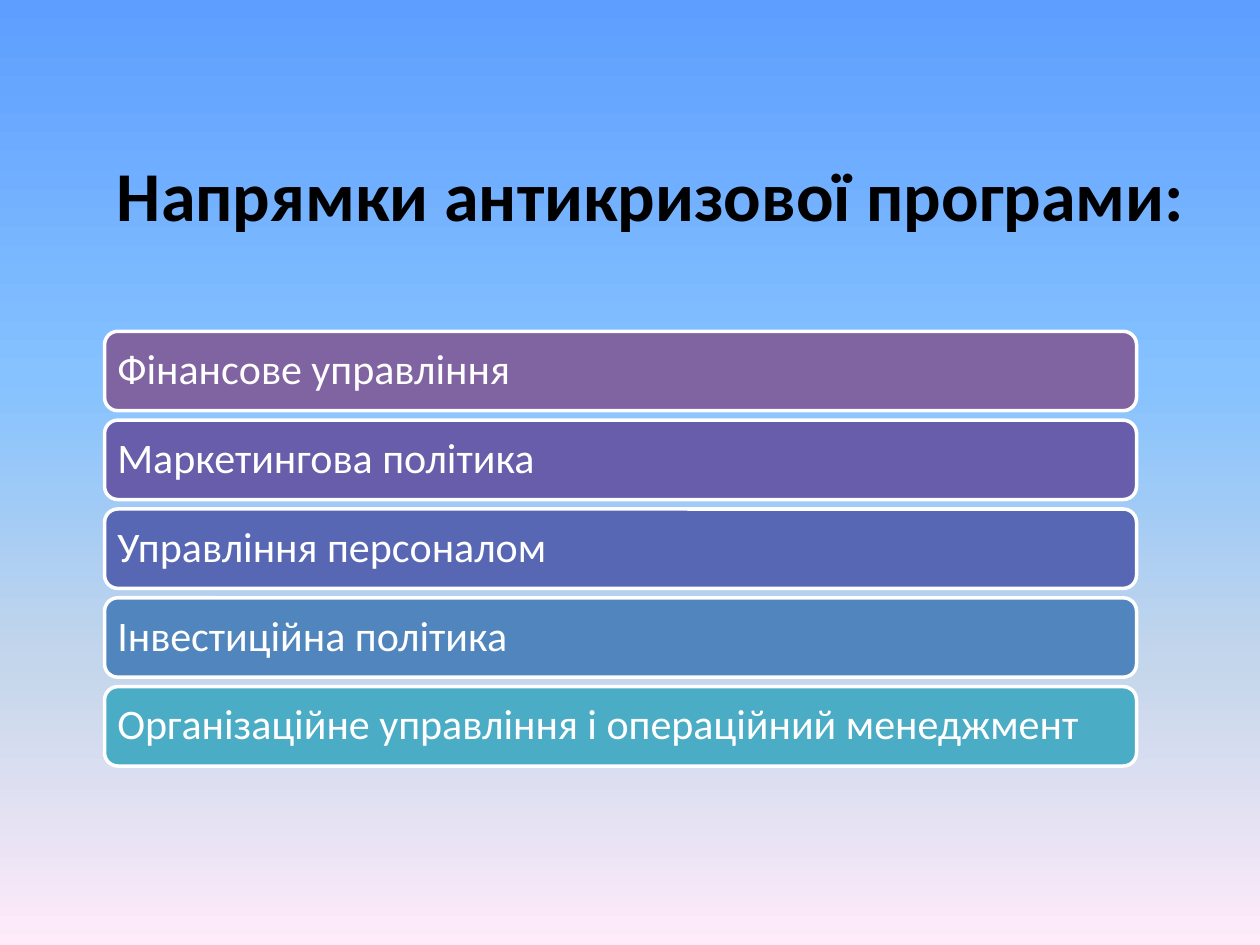
import pptx
import pptx.util
import pptx.dml.color
import pptx.enum.shapes
import pptx.enum.text
import pptx.oxml
import pptx.oxml.ns

Inches, Pt = pptx.util.Inches, pptx.util.Pt
ANCHOR = pptx.enum.text.MSO_ANCHOR
qn = pptx.oxml.ns.qn

# Content
TITLE = "Напрямки антикризової програми:"
BARS = [
    ("Фінансове управління", "8064A2"),
    ("Маркетингова політика", "685DAB"),
    ("Управління персоналом", "5767B4"),
    ("Інвестиційна політика", "5185BD"),
    ("Організаційне управління і операційний менеджмент", "4BACC6"),
]
SKY = [(0, "5E9EFF"), (40, "85C2FF"), (70, "C4D6EB"), (100, "FFEBFA")]

# Layout, in inches
LEFT, TOP, WIDTH, HEIGHT = 0.83, 2.63, 8.19, 0.63
STEP = 0.705
PAD = 0.07  # the rounded corner adds the rest of the inset


def color(code):
    return pptx.dml.color.RGBColor.from_string(code)


def write(shape, text, size=24, ink="FFFFFF", bold=False, wrap=True,
          anchor=ANCHOR.MIDDLE, pad=None, lines=None):
    frame = shape.text_frame
    frame.word_wrap = wrap
    frame.vertical_anchor = anchor
    if pad is not None:
        frame.margin_left = frame.margin_right = Inches(pad)
        frame.margin_top = frame.margin_bottom = Inches(pad)
    para = frame.paragraphs[0]
    para.alignment = pptx.enum.text.PP_ALIGN.LEFT
    if lines:
        para.line_spacing = lines
    run = para.add_run()
    run.text = text
    run.font.name = "Calibri"
    run.font.size = Pt(size)
    run.font.bold = bold
    run.font.color.rgb = color(ink)


def paint(slide, stops):
    fill = slide.background.fill
    fill.gradient()
    fill.gradient_angle = 270
    # A gradient with four stops needs its list rewritten
    group = next(slide.element.iter(qn("a:gsLst")))
    for old in list(group):
        group.remove(old)
    space = pptx.oxml.ns.nsdecls("a")
    for place, code in stops:
        group.append(pptx.oxml.parse_xml(
            f'<a:gs {space} pos="{place * 1000}"><a:srgbClr val="{code}"/></a:gs>'))


def main():
    deck = pptx.Presentation()
    deck.slide_width, deck.slide_height = Inches(10), Inches(7.5)
    slide = deck.slides.add_slide(deck.slide_layouts[6])
    paint(slide, SKY)

    # Stacked bars
    for i, (text, code) in enumerate(BARS):
        bar = slide.shapes.add_shape(
            pptx.enum.shapes.MSO_SHAPE.ROUNDED_RECTANGLE,
            Inches(LEFT), Inches(TOP + i * STEP), Inches(WIDTH), Inches(HEIGHT))
        bar.shadow.inherit = False
        bar.fill.solid()
        bar.fill.fore_color.rgb = color(code)
        bar.line.color.rgb = color("FFFFFF")
        bar.line.width = Pt(2)
        write(bar, text, pad=PAD, lines=0.9)

    # Title
    box = slide.shapes.add_textbox(
        Inches(LEFT), Inches(1.15), Inches(8.76), Inches(0.77))
    write(box, TITLE, size=40, ink="000000", bold=True, wrap=False,
          anchor=ANCHOR.TOP)
    box.text_frame.auto_size = pptx.enum.text.MSO_AUTO_SIZE.SHAPE_TO_FIT_TEXT

    deck.save("out.pptx")


if __name__ == "__main__":
    main()
